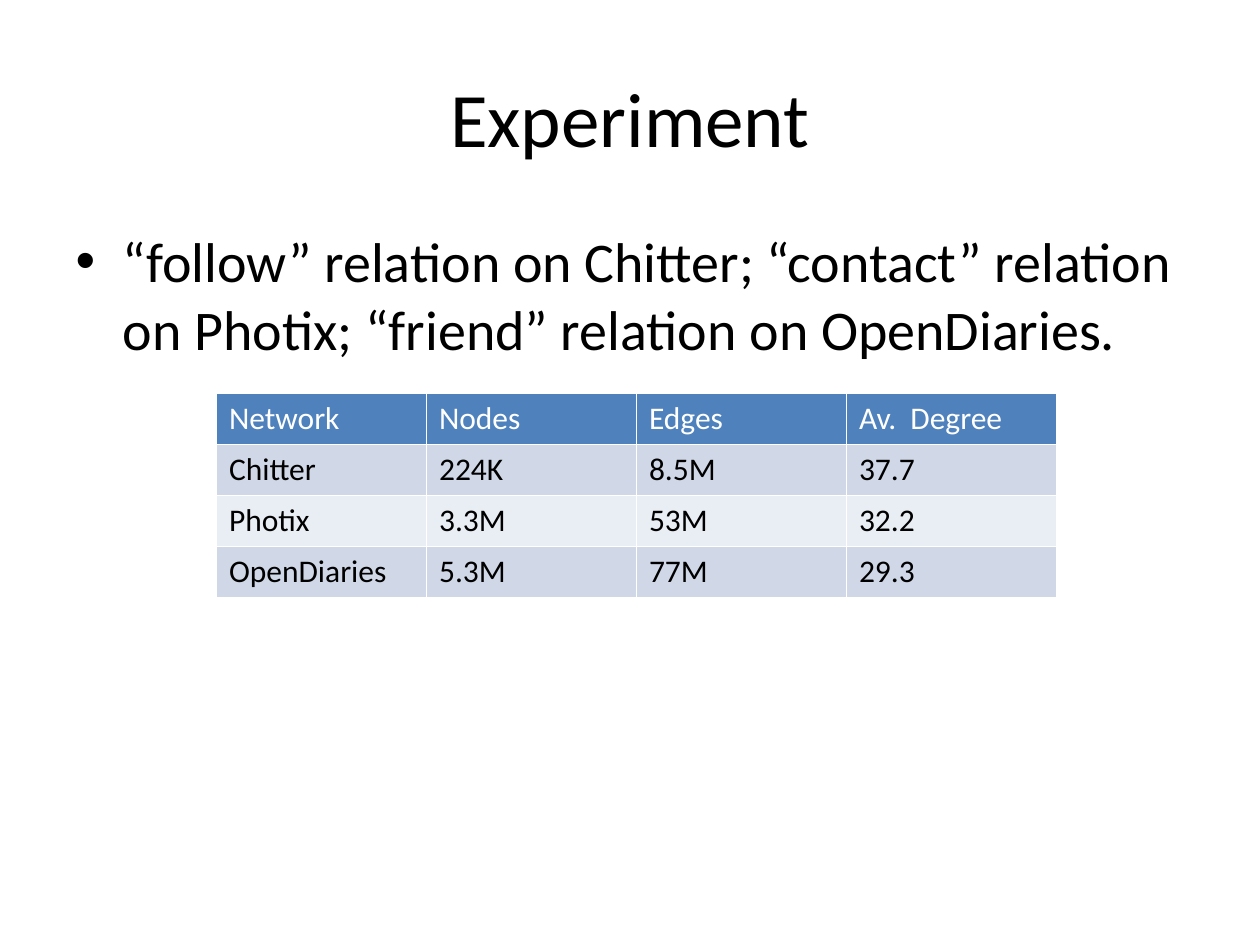
from pptx import Presentation
from pptx.dml.color import RGBColor
from pptx.enum.text import MSO_ANCHOR, PP_ALIGN
from pptx.util import Pt


def color(value):
    return RGBColor.from_string(value)


class Deck:
    font = "Calibri"
    black = "000000"
    white = "FFFFFF"
    header_fill = "4F81BD"
    band_fills = ("D0D8E8", "E9EDF4")

    def __init__(self, prs):
        self.slide = prs.slides.add_slide(prs.slide_layouts[1])

    def run(self, p, text, size, hex_color):
        r = p.add_run()
        r.text = text
        r.font.name = self.font
        r.font.size = Pt(size)
        r.font.color.rgb = color(hex_color)
        return r

    def place(self, sp, left, top, width, height):
        sp.left, sp.top = Pt(left), Pt(top)
        sp.width, sp.height = Pt(width), Pt(height)

    def title(self, text, box):
        sp = self.slide.shapes.title
        self.place(sp, *box)
        tf = sp.text_frame
        tf.vertical_anchor = MSO_ANCHOR.MIDDLE
        p = tf.paragraphs[0]
        p.alignment = PP_ALIGN.CENTER
        self.run(p, text, 44, self.black)

    def bullet(self, text, box):
        sp = self.slide.placeholders[1]
        self.place(sp, *box)
        self.run(sp.text_frame.paragraphs[0], text, 32, self.black)

    def table(self, rows, left, top, col_width, row_height):
        n_rows, n_cols = len(rows), len(rows[0])
        table = self.slide.shapes.add_table(
            n_rows, n_cols, Pt(left), Pt(top),
            Pt(col_width * n_cols), Pt(row_height * n_rows)).table
        for i, row in enumerate(rows):
            fill = self.band_fills[(i - 1) % 2] if i else self.header_fill
            for j, text in enumerate(row):
                cell = table.cell(i, j)
                cell.fill.solid()
                cell.fill.fore_color.rgb = color(fill)
                p = cell.text_frame.paragraphs[0]
                r = self.run(p, text, 18, self.black if i else self.white)
                r.font.bold = False


def main():
    prs = Presentation()
    prs.slide_width, prs.slide_height = Pt(720), Pt(540)
    deck = Deck(prs)
    deck.title("Experiment", (36, 21.6, 648, 90))
    deck.bullet(
        "“follow” relation on Chitter; “contact” relation on Photix; "
        "“friend” relation on OpenDiaries.",
        (36, 126, 648, 356.4))
    deck.table(
        [("Network", "Nodes", "Edges", "Av.  Degree"),
         ("Chitter", "224K", "8.5M", "37.7"),
         ("Photix", "3.3M", "53M", "32.2"),
         ("OpenDiaries", "5.3M", "77M", "29.3")],
        left=123.7, top=224.7, col_width=120, row_height=29.2)
    prs.save("out.pptx")


if __name__ == "__main__":
    main()
